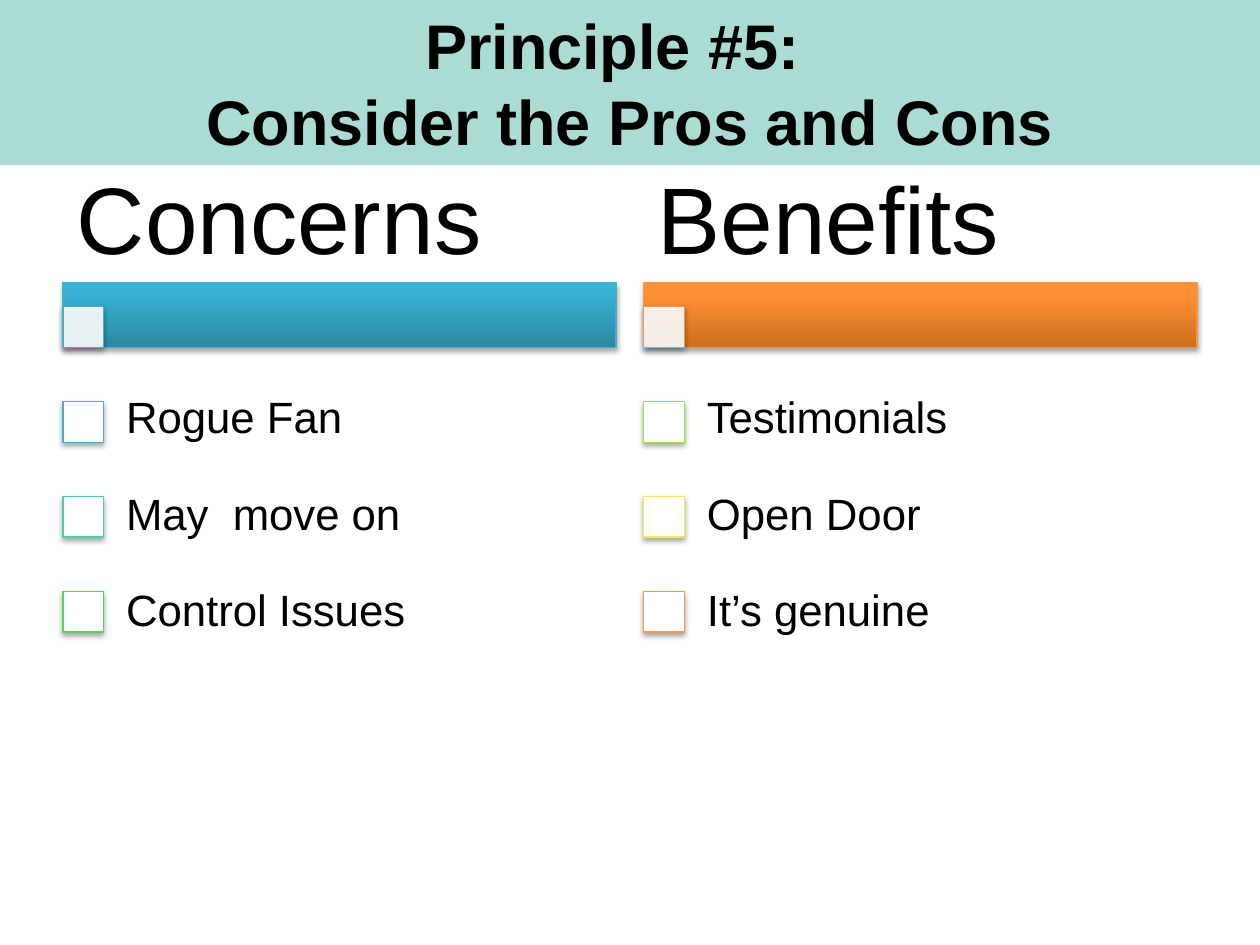
from copy import deepcopy

from lxml.etree import SubElement
from pptx import Presentation
from pptx.dml.color import RGBColor
from pptx.enum.shapes import MSO_SHAPE
from pptx.enum.text import MSO_ANCHOR, MSO_AUTO_SIZE, PP_ALIGN
from pptx.oxml.ns import qn
from pptx.util import Cm, Pt

# Shared measures in centimetres
COLUMN_LEFT, COLUMN_STEP, COLUMN_WIDTH = 1.27, 11.71, 11.15
MARKER_SIZE, MARKER_TOP, ROW_STEP = 0.82, 8.1, 1.91
TEXT_INDENT = 0.79

TITLE_FORMAT = {"size": Pt(36), "bold": True}
HEADING_FORMAT = {"size": Pt(54), "bold": False}
ITEM_FORMAT = {"size": Pt(25), "bold": False}

COLUMNS = [
    {
        "heading": "Concerns",
        "line": "4BACC6",
        "gradient": ["2A88A2", "37B1D2", "34B4D6"],
        "items": [("Rogue Fan", "4BACC6"), ("May  move on", "49D1A3"),
                  ("Control Issues", "47DC57")],
    },
    {
        "heading": "Benefits",
        "line": "F79646",
        "gradient": ["CC6E20", "FF9034", "FF9136"],
        "items": [("Testimonials", "8DE646"), ("Open Door", "EEEF46"),
                  ("It’s genuine", "F79646")],
    },
]


def set_color(color_format, value):
    color_format.rgb = RGBColor.from_string(value)


def fill_solid(shape, value):
    shape.fill.solid()
    set_color(shape.fill.fore_color, value)


def fill_gradient(shape, colors):
    """Three stops running from the bottom edge to the top edge."""
    shape.fill.gradient()
    shape.fill.gradient_angle = 90
    stop_list = shape._element.spPr.find(qn("a:gradFill")).find(qn("a:gsLst"))
    stop_list.append(deepcopy(stop_list[-1]))
    for stop, color, position in zip(shape.fill.gradient_stops, colors, (0, 0.8, 1)):
        set_color(stop.color, color)
        stop.position = position


def add_alpha(color_element, percent):
    SubElement(color_element, qn("a:alpha"), val=str(percent * 1000))


def add_shadow(shape):
    shape.shadow.inherit = False
    effects = shape._element.spPr.find(qn("a:effectLst"))
    shadow = SubElement(effects, qn("a:outerShdw"), blurRad="40000",
                        dist="23000", dir="5400000", rotWithShape="0")
    add_alpha(SubElement(shadow, qn("a:srgbClr"), val="000000"), 35)


def add_block(page, left, top, width, height, line):
    block = page.shapes.add_shape(MSO_SHAPE.RECTANGLE, Cm(left), Cm(top),
                                  Cm(width), Cm(height))
    set_color(block.line.color, line)
    block.line.width = Pt(0.75)
    add_shadow(block)
    return block


def add_marker(page, left, top, line):
    marker = add_block(page, left, top, MARKER_SIZE, MARKER_SIZE, line)
    fill_solid(marker, "FFFFFF")
    return marker


def fill_placeholder(box, area, lines, text_format, insets,
                     align=PP_ALIGN.LEFT, line_spacing=0.9, gap=0):
    box.left, box.top, box.width, box.height = map(Cm, area)
    frame = box.text_frame
    side, edge = map(Cm, insets)
    frame_format = {"word_wrap": True, "auto_size": MSO_AUTO_SIZE.NONE,
                    "vertical_anchor": MSO_ANCHOR.MIDDLE,
                    "margin_left": side, "margin_right": side,
                    "margin_top": edge, "margin_bottom": edge}
    for name, value in frame_format.items():
        setattr(frame, name, value)
    for index, line in enumerate(lines):
        para = frame.paragraphs[0] if index == 0 else frame.add_paragraph()
        properties = para._p.get_or_add_pPr()
        properties.set("marL", "0")
        properties.set("indent", "0")
        SubElement(properties, qn("a:buNone"))
        para.alignment = align
        para.line_spacing = line_spacing
        para.space_before = Pt(gap if index else 0)
        para.space_after = Pt(0)
        span = para.add_run()
        span.text = line
        for name, value in {"name": "Arial", **text_format}.items():
            setattr(span.font, name, value)
        set_color(span.font.color, "000000")


def add_column(page, left, column, heading_box, list_box):
    # Heading
    fill_placeholder(heading_box, (left, 3.33, COLUMN_WIDTH, 2.36),
                     [column["heading"]], HEADING_FORMAT, (0.28, 0.18))

    # Gradient bar with its translucent corner square
    bar = add_block(page, left, 5.69, COLUMN_WIDTH, 1.32, column["line"])
    fill_gradient(bar, column["gradient"])
    corner = add_marker(page, left, 6.18, column["line"])
    solid = corner._element.spPr.find(qn("a:solidFill"))
    add_alpha(solid[0], 90)

    # List and its check boxes
    items = column["items"]
    list_area = (left + TEXT_INDENT, 7.54, COLUMN_WIDTH - TEXT_INDENT,
                 ROW_STEP * len(items))
    fill_placeholder(list_box, list_area, [text for text, _ in items],
                     ITEM_FORMAT, (0.48, 0.48), gap=28.2)
    for row, (_, line) in enumerate(items):
        add_marker(page, left, MARKER_TOP + row * ROW_STEP, line)


def main():
    deck = Presentation()
    deck.slide_width, deck.slide_height = Cm(25.4), Cm(19.05)
    page = deck.slides.add_slide(deck.slide_layouts.get_by_name("Comparison"))
    title, *boxes = page.placeholders

    # Title band
    fill_solid(title, "ABDCD4")
    fill_placeholder(title, (0, 0, 25.4, 3.33),
                     ["Principle #5:  ", "Consider the Pros and Cons"],
                     TITLE_FORMAT, (0.25, 0.13), PP_ALIGN.CENTER, 1.0)

    # Two columns, each with a heading and a list placeholder
    for index, column in enumerate(COLUMNS):
        add_column(page, COLUMN_LEFT + index * COLUMN_STEP, column,
                   *boxes[2 * index:2 * index + 2])

    deck.save("out.pptx")


if __name__ == "__main__":
    main()
